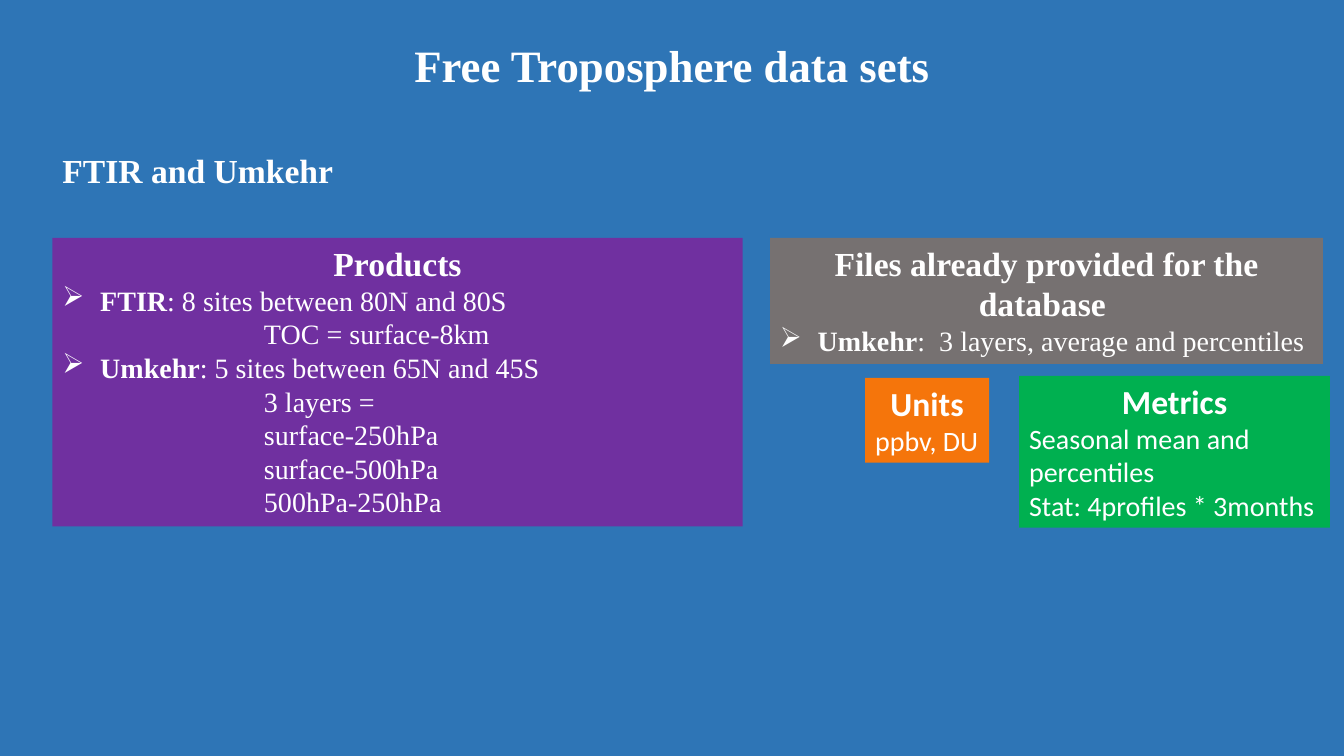
"""Build the slide on free troposphere data sets."""
from lxml import etree
from pptx import Presentation
from pptx import util as u
from pptx.dml.color import RGBColor
from pptx.enum import shapes, text
from pptx.oxml.ns import qn

COLORS = {
    "background": "2E75B6",
    "text": "FFFFFF",
    "products": "7030A0",
    "files": "767171",
    "units": "F5750B",
    "metrics": "00B050",
}
SERIF, SANS = "Times New Roman", "Calibri"
HEADING_SIZE, BODY_SIZE = 24, 20
BULLET_INDENT, DETAIL_INDENT = 27, 144


def paint(fill, color):
    """Give a fill one solid colour."""
    fill.solid()
    fill.fore_color.rgb = RGBColor.from_string(COLORS[color])


def add_run(paragraph, words, font, size, bold=False):
    """Add one white run to a paragraph."""
    run = paragraph.add_run()
    run.text = words
    run.font.name = font
    run.font.size = u.Pt(size)
    run.font.bold = bold
    run.font.color.rgb = RGBColor.from_string(COLORS["text"])


def set_indent(paragraph, left, bullet=None):
    """Indent a paragraph, hanging a bullet in the margin if one is given."""
    properties = paragraph._p.get_or_add_pPr()
    properties.set("marL", str(u.Pt(left)))
    if bullet:
        properties.set("indent", str(-u.Pt(left)))
        etree.SubElement(properties, qn("a:buChar")).set("char", bullet)


def write_heading(shape, words, size, alignment):
    """Write a bold heading at the top of a shape."""
    frame = shape.text_frame
    frame.word_wrap = True
    frame.auto_size = text.MSO_AUTO_SIZE.NONE
    frame.vertical_anchor = text.MSO_ANCHOR.TOP
    paragraph = frame.paragraphs[0]
    paragraph.alignment = alignment
    paragraph.line_spacing = 0.9
    add_run(paragraph, words, SERIF, size, bold=True)


def add_title(slide, words):
    """Move and fill the title placeholder."""
    title = slide.shapes.title
    title.left, title.top = u.Pt(120), u.Pt(28)
    title.width, title.height = u.Pt(720), u.Pt(78.5)
    write_heading(title, words, 32, text.PP_ALIGN.CENTER)


def add_subtitle(slide, words):
    """Add the subtitle below the title."""
    box = slide.shapes.add_textbox(u.Pt(37.5), u.Pt(106.5), u.Pt(885), u.Pt(42))
    write_heading(box, words, HEADING_SIZE, text.PP_ALIGN.LEFT)


def add_panel(slide, color, bounds, font, heading, lines, wrap=True):
    """Add a coloured box with a heading and (label, words, indent) lines."""
    shape = slide.shapes.add_shape(
        shapes.MSO_SHAPE.RECTANGLE, *(u.Pt(length) for length in bounds))
    shape.shadow.inherit = False
    paint(shape.fill, color)
    shape.line.fill.background()
    frame = shape.text_frame
    frame.word_wrap = wrap
    frame.auto_size = text.MSO_AUTO_SIZE.SHAPE_TO_FIT_TEXT
    frame.vertical_anchor = text.MSO_ANCHOR.TOP
    paragraph = frame.paragraphs[0]
    paragraph.alignment = text.PP_ALIGN.CENTER
    add_run(paragraph, heading, font, HEADING_SIZE, bold=True)
    for label, words, indent in lines:
        paragraph = frame.add_paragraph()
        paragraph.alignment = text.PP_ALIGN.LEFT
        set_indent(paragraph, indent, "➢" if label else None)
        if label:
            add_run(paragraph, label, font, BODY_SIZE, bold=True)
        add_run(paragraph, words, font, BODY_SIZE)


def main():
    """Build and save the slide."""
    presentation = Presentation()
    presentation.slide_width, presentation.slide_height = u.Pt(960), u.Pt(540)
    slide = presentation.slides.add_slide(presentation.slide_layouts[5])
    paint(slide.background.fill, "background")
    add_title(slide, "Free Troposphere data sets")
    add_subtitle(slide, "FTIR and Umkehr")
    add_panel(slide, "units", (618, 270, 88.5, 60.5), SANS, "Units",
              [("", "ppbv, DU", 0)], wrap=False)
    add_panel(slide, "metrics", (728, 268.5, 222, 108.5), SANS, "Metrics", [
        ("", "Seasonal mean and percentiles", 0),
        ("", "Stat: 4profiles * 3months", 0),
    ])
    add_panel(slide, "products", (37.5, 170, 493, 206), SERIF, "Products", [
        ("FTIR", ": 8 sites between 80N and 80S", BULLET_INDENT),
        ("", "TOC = surface-8km", DETAIL_INDENT),
        ("Umkehr", ": 5 sites between 65N and 45S", BULLET_INDENT),
        ("", "3 layers =", DETAIL_INDENT),
        ("", "surface-250hPa", DETAIL_INDENT),
        ("", "surface-500hPa", DETAIL_INDENT),
        ("", "500hPa-250hPa", DETAIL_INDENT),
    ])
    add_panel(slide, "files", (550, 170, 395, 90), SERIF,
              "Files already provided for the database ",
              [("Umkehr", ":  3 layers, average and percentiles", BULLET_INDENT)])
    presentation.save("out.pptx")


if __name__ == "__main__":
    main()
